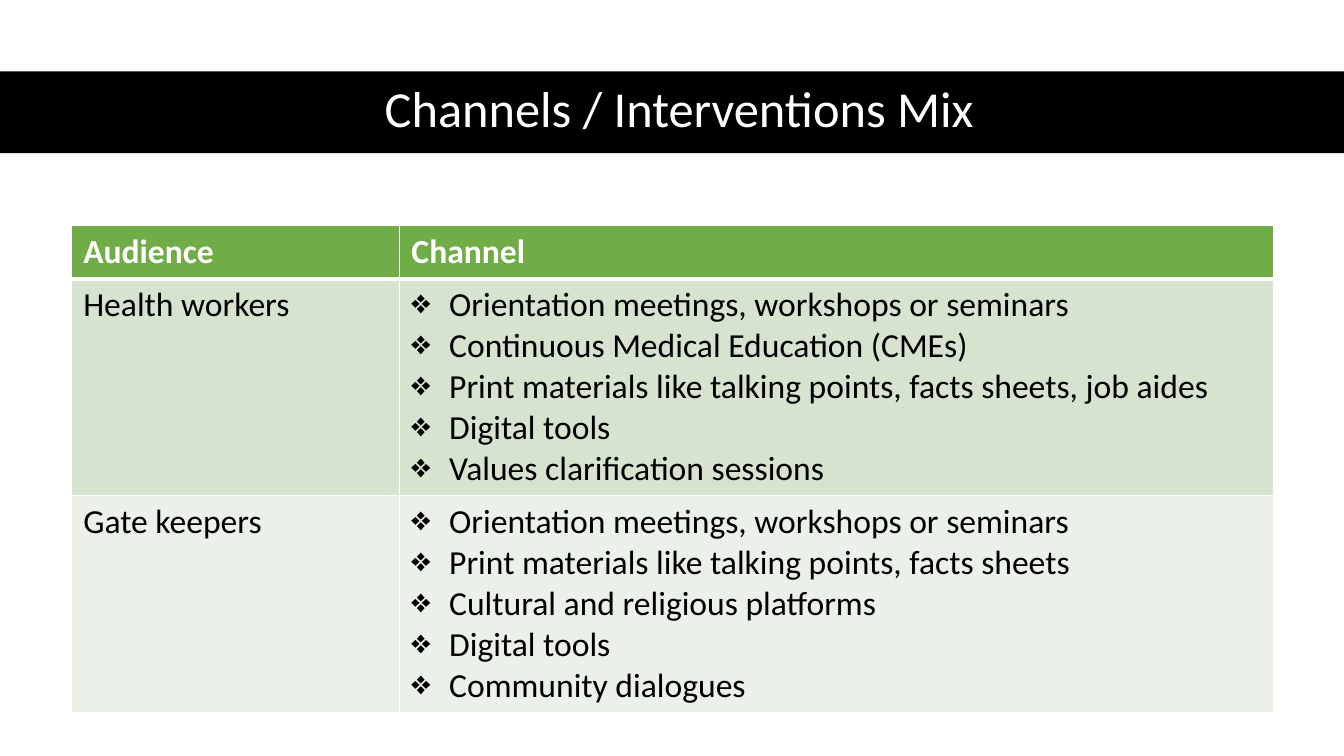
from lxml import etree
from pptx import Presentation
from pptx import util as u
from pptx.dml import color
from pptx.enum import shapes, text
from pptx.oxml import ns

COLORS = {
    "black": "000000",
    "white": "FFFFFF",
    "header": "70AD47",
    "dark band": "D5E3CF",
    "light band": "EBF1E9",
}
HANGING = u.Cm(0.95)


def rgb(name):
    return color.RGBColor.from_string(COLORS[name])


def write(frame, lines, size=24, ink="black", bold=False, bullet=None,
          align=text.PP_ALIGN.LEFT, spacing=None):
    for number, line in enumerate(lines):
        para = frame.add_paragraph() if number else frame.paragraphs[0]
        para.alignment = align
        para.line_spacing = spacing
        if bullet:
            properties = para._p.get_or_add_pPr()
            properties.set("marL", str(HANGING))
            properties.set("indent", str(-HANGING))
            etree.SubElement(properties, ns.qn("a:buChar"), char=bullet)
        span = para.add_run()
        span.text = line
        span.font.name = "Calibri"
        span.font.size = u.Pt(size)
        span.font.bold = bold
        span.font.color.rgb = rgb(ink)


deck = Presentation()
deck.slide_width = u.Cm(33.87)
deck.slide_height = u.Cm(19.05)
page = deck.slides.add_slide(deck.slide_layouts[5])

# Title on a black band
title = page.shapes.title
title.left, title.top = u.Cm(1.55), u.Cm(1.78)
title.width, title.height = u.Cm(31.14), u.Cm(2.06)
title.text_frame.auto_size = text.MSO_AUTO_SIZE.NONE
title.text_frame.vertical_anchor = text.MSO_ANCHOR.MIDDLE
write(title.text_frame, ["Channels / Interventions Mix"], size=36,
      ink="white", align=text.PP_ALIGN.CENTER, spacing=0.9)

band = page.shapes.add_shape(shapes.MSO_SHAPE.RECTANGLE, 0, u.Cm(1.8),
                             deck.slide_width, u.Cm(2.06))
band.shadow.inherit = False
band.fill.solid()
band.fill.fore_color.rgb = rgb("black")
band.line.fill.background()
title._element.addprevious(band._element)  # keeps the band behind the title

# Audience and channel table
rows = [
    ("header", 1.32, ["Audience"], ["Channel"]),
    ("dark band", 5.46, ["Health workers"], [
        "Orientation meetings, workshops or seminars",
        "Continuous Medical Education (CMEs)",
        "Print materials like talking points, facts sheets, job aides",
        "Digital tools",
        "Values clarification sessions",
    ]),
    ("light band", 5.46, ["Gate keepers"], [
        "Orientation meetings, workshops or seminars",
        "Print materials like talking points, facts sheets",
        "Cultural and religious platforms",
        "Digital tools",
        "Community dialogues",
    ]),
]
widths = [8.27, 22.03]
table = page.shapes.add_table(
    len(rows), len(widths), u.Cm(1.8), u.Cm(5.69), u.Cm(sum(widths)),
    u.Cm(sum(row[1] for row in rows))).table
for column, width in zip(table.columns, widths):
    column.width = u.Cm(width)

for row_number, (fill, height, *contents) in enumerate(rows):
    table.rows[row_number].height = u.Cm(height)
    is_header = row_number == 0
    for column_number, lines in enumerate(contents):
        cell = table.cell(row_number, column_number)
        cell.margin_left = cell.margin_right = u.Cm(0.3)
        cell.margin_top = cell.margin_bottom = u.Cm(0.15)

        # White borders, thicker around the header's lower edge
        for side in ("L", "R", "T", "B"):
            thick = (row_number, side) in ((0, "B"), (1, "T"))
            border = etree.SubElement(cell._tc.get_or_add_tcPr(),
                                      ns.qn(f"a:ln{side}"),
                                      w=str(u.Pt(3 if thick else 1)))
            solid = etree.SubElement(border, ns.qn("a:solidFill"))
            etree.SubElement(solid, ns.qn("a:srgbClr"), val=COLORS["white"])

        cell.fill.solid()
        cell.fill.fore_color.rgb = rgb(fill)
        write(cell.text_frame, lines, bold=is_header,
              ink="white" if is_header else "black",
              bullet="❖" if column_number and not is_header else None)

deck.save("out.pptx")
